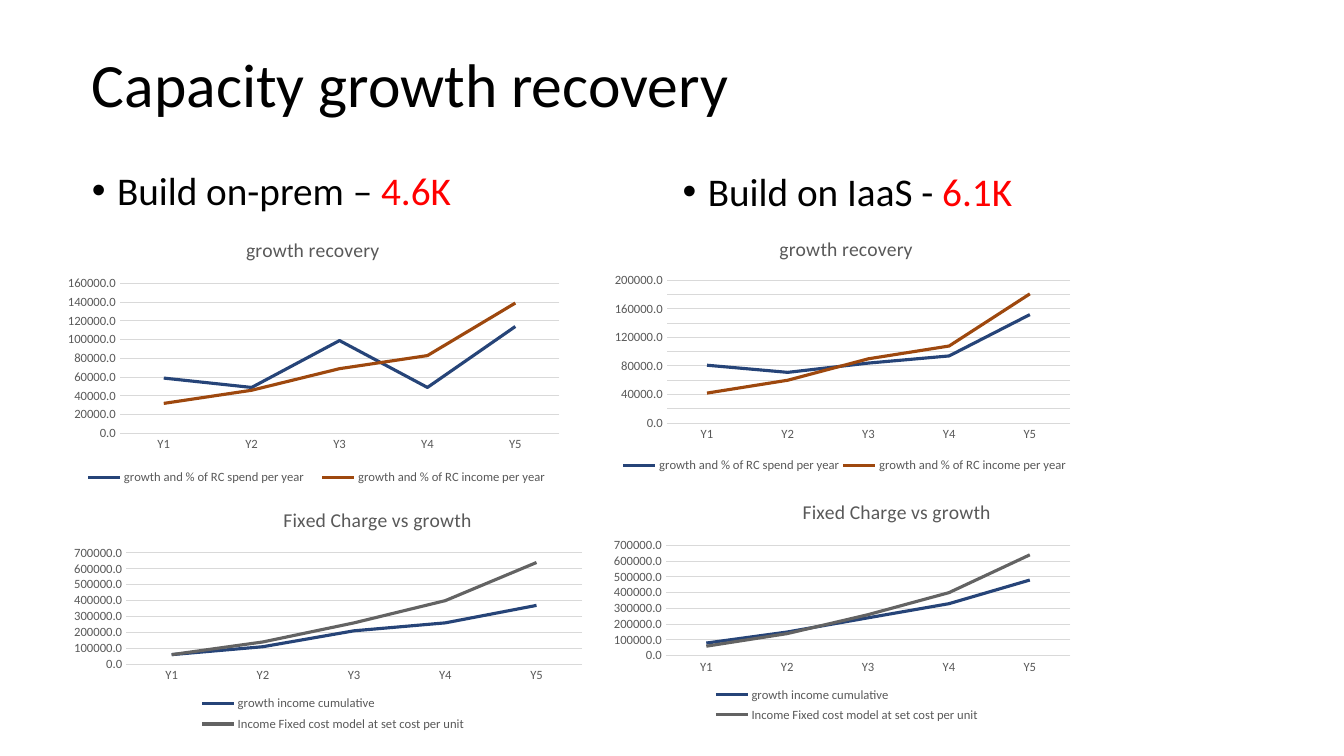
from lxml import etree
from pptx import Presentation
from pptx import util as u
from pptx.chart.data import CategoryChartData
from pptx.dml.color import RGBColor
from pptx.enum import chart as ch, text
from pptx.oxml.ns import qn

FONT = "Calibri"
WIDTH, HEIGHT = u.Inches(13.33), u.Inches(7.5)
YEARS = ["Y1", "Y2", "Y3", "Y4", "Y5"]
BLUE, BROWN, GREY, TEXT, GRID = "264478", "9E480E", "636363", "595959", "D9D9D9"
PLOT_LEFT, PLOT_RIGHT, PLOT_END = 0.12, 0.13, 0.98

RECOVERY = {
    "title": "growth recovery",
    "series": [("growth and % of RC spend per year", BLUE),
               ("growth and % of RC income per year", BROWN)],
    "step": 20000,
    "title_at": (0.36, 0.04),
    "plot_rows": (0.23, 0.56),
    "legend_at": (0.03, 0.91, 0.95, 0.09),
}
FIXED_CHARGE = {
    "title": "Fixed Charge vs growth",
    "series": [("growth income cumulative", BLUE),
               ("Income Fixed cost model at set cost per unit", GREY)],
    "step": 100000,
    "title_at": (0.41, 0.03),
    "plot_rows": (0.24, 0.46),
    "legend_at": (0.21, 0.81, 0.6, 0.19),
}
FIXED_INCOME = [60000, 140000, 260000, 400000, 640000]


def rgb(color):
    return RGBColor.from_string(color)


def box(x, y, w, h):
    return [int(side * share / 100) for side, share in
            zip((WIDTH, HEIGHT, WIDTH, HEIGHT), (x, y, w, h))]


def place(sp, area):
    sp.left, sp.top, sp.width, sp.height = box(*area)


def style(font, size, color):
    font.name, font.size, font.bold = FONT, u.Pt(size), False
    font.color.rgb = rgb(color)


def add_title(s, words, area):
    sp = s.shapes.title
    place(sp, area)
    tf = sp.text_frame
    tf.text = words
    tf.vertical_anchor = text.MSO_ANCHOR.MIDDLE
    p = tf.paragraphs[0]
    p.alignment, p.line_spacing = text.PP_ALIGN.LEFT, 0.9
    style(p.runs[0].font, 44, "000000")


def add_bullet(sp, words, amount, area):
    place(sp, area)
    p = sp.text_frame.paragraphs[0]
    p.text = words
    p.add_run().text = amount
    p.line_spacing, p.space_before = 0.9, u.Pt(0)
    pPr = p._p.get_or_add_pPr()
    pPr.set("marL", str(u.Inches(0.25)))
    pPr.set("indent", str(-u.Inches(0.25)))
    etree.SubElement(pPr, qn("a:buFont")).set("typeface", "Arial")
    etree.SubElement(pPr, qn("a:buChar")).set("char", "•")
    for r, color in zip(p.runs, ("000000", "FF0000")):
        style(r.font, 28, color)


def set_layout(element, index, area, inner=False):
    for old in element.findall(qn("c:layout")):
        element.remove(old)
    layout = etree.Element(qn("c:layout"))
    manual = etree.SubElement(layout, qn("c:manualLayout"))
    values = [("layoutTarget", "inner")] if inner else []
    values += [("xMode", "edge"), ("yMode", "edge")]
    values += zip("xywh", area)
    for name, value in values:
        etree.SubElement(manual, qn("c:" + name)).set("val", str(value))
    element.insert(index, layout)


def format_axes(chart, top, step):
    for axis in (chart.category_axis, chart.value_axis):
        axis.major_tick_mark = axis.minor_tick_mark = ch.XL_TICK_MARK.NONE
        style(axis.tick_labels.font, 9, TEXT)
    years, values = chart.category_axis, chart.value_axis
    values.minimum_scale, values.maximum_scale, values.major_unit = 0, top, step
    values.tick_labels.number_format = "0.0"
    values.tick_labels.number_format_is_linked = False
    values.format.line.fill.background()
    for line in (years.format.line, values.major_gridlines.format.line):
        line.color.rgb, line.width = rgb(GRID), u.Pt(0.75)


def add_line_chart(s, kind, area, plot_x, top, *rows):
    data = CategoryChartData()
    data.categories = YEARS
    for (name, _), row in zip(kind["series"], rows):
        data.add_series(name, row)
    chart = s.shapes.add_chart(ch.XL_CHART_TYPE.LINE, *box(*area), data).chart
    style(chart.font, 10, "000000")
    plot = chart.plots[0]
    plot.vary_by_categories = False
    for series, (_, color) in zip(plot.series, kind["series"]):
        series.smooth = False
        series.format.line.color.rgb = rgb(color)
        series.format.line.width = u.Pt(2.25)
    format_axes(chart, top, kind["step"])
    tf = chart.chart_title.text_frame
    tf.text = kind["title"]
    style(tf.paragraphs[0].runs[0].font, 14, TEXT)
    chart.has_legend = True
    chart.legend.position = ch.XL_LEGEND_POSITION.BOTTOM
    chart.legend.include_in_layout = False
    style(chart.legend.font, 9, TEXT)
    set_layout(chart.chart_title._element, 1, kind["title_at"])
    set_layout(chart.legend._element, 1, kind["legend_at"])
    plot_area = chart._chartSpace.find(".//" + qn("c:plotArea"))
    plot_y, plot_h = kind["plot_rows"]
    plot_w = round(PLOT_END - plot_x, 2)
    set_layout(plot_area, 0, (plot_x, plot_y, plot_w, plot_h), inner=True)


def main():
    prs = Presentation()
    prs.slide_width, prs.slide_height = WIDTH, HEIGHT
    s = prs.slides.add_slide(prs.slide_layouts[3])
    add_title(s, "Capacity growth recovery", (6.08, 5.33, 88.75, 12.4))
    add_bullet(s.placeholders[1], "Build on-prem – ", "4.6K", (6.08, 22, 43.96, 68.13))
    add_bullet(s.placeholders[2], "Build on IaaS - ", "6.1K", (50.04, 22.13, 43.96, 68.13))
    add_line_chart(s, RECOVERY, (45.01, 29.33, 35.33, 33.73), PLOT_RIGHT, 200000,
                   [81000, 71000, 84000, 94000, 152000],
                   [42000, 60000, 90000, 108000, 181000])
    add_line_chart(s, FIXED_CHARGE, (44.94, 64.53, 35.41, 31.73), PLOT_RIGHT, 700000,
                   [80000, 150000, 240000, 330000, 480000], FIXED_INCOME)
    add_line_chart(s, RECOVERY, (4.35, 29.33, 38.03, 35.47), PLOT_LEFT, 160000,
                   [59000, 49000, 99000, 49000, 114000],
                   [32000, 46000, 69000, 83000, 139000])
    add_line_chart(s, FIXED_CHARGE, (4.65, 65.47, 39.46, 32), PLOT_LEFT, 700000,
                   [60000, 110000, 210000, 260000, 370000], FIXED_INCOME)
    prs.save("out.pptx")


if __name__ == "__main__":
    main()
